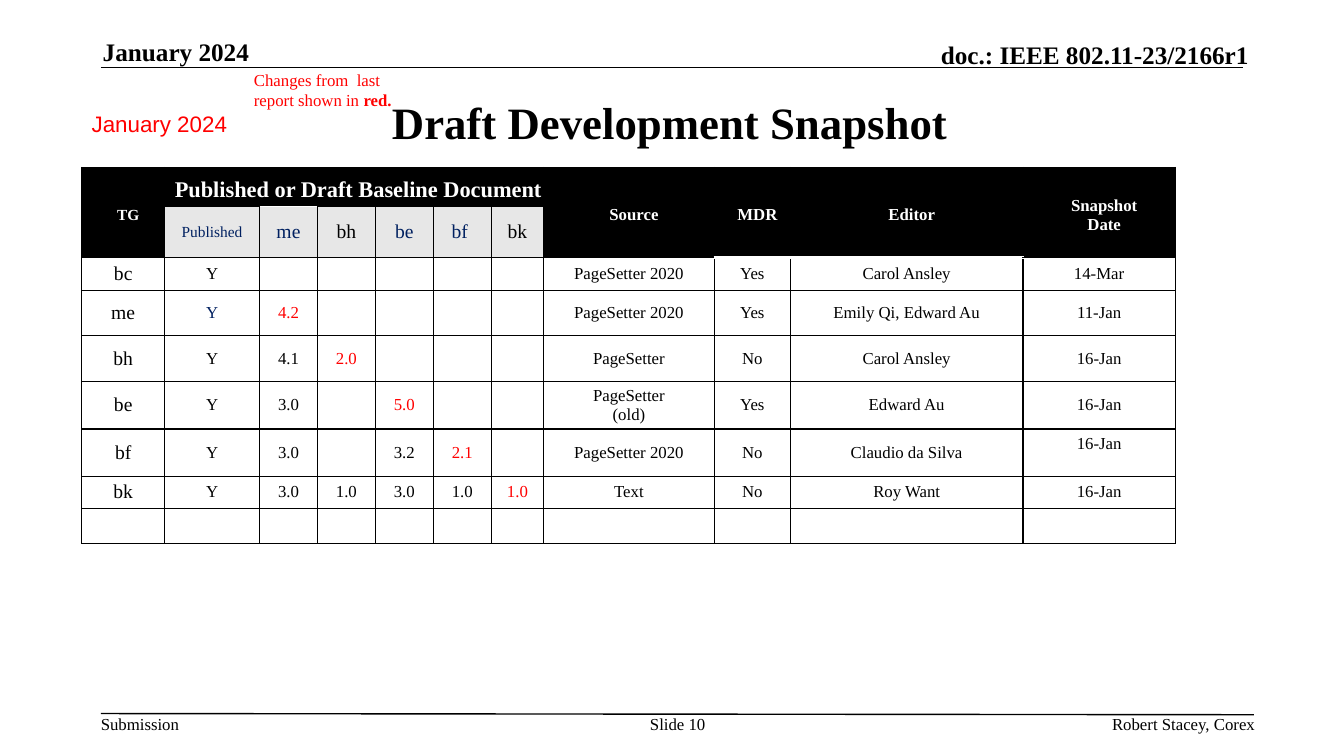
"""Build the draft development snapshot slide."""
from dataclasses import dataclass

from lxml import etree
from pptx import Presentation
from pptx import util as u
from pptx.dml.color import RGBColor
from pptx.enum import shapes, text
from pptx.oxml import ns

HUES = {"black": "000000", "white": "FFFFFF", "red": "FF0000", "navy": "002060", "grey": "E7E7E7"}
LEFT, MID, RIGHT = text.PP_ALIGN.LEFT, text.PP_ALIGN.CENTER, text.PP_ALIGN.RIGHT
TOP, CENTRE, BASE = text.MSO_ANCHOR.TOP, text.MSO_ANCHOR.MIDDLE, text.MSO_ANCHOR.BOTTOM
SERIF = "Times New Roman"


@dataclass(frozen=True)
class Style:
    size: int = 12
    hue: str = "black"
    bold: bool = False
    face: str = SERIF
    align: int = MID


@dataclass(frozen=True)
class Label:
    words: str
    left: float
    top: float
    width: float
    height: float
    style: Style
    anchor: int = TOP
    inset: bool = False
    strong: str = ""


@dataclass(frozen=True)
class Line:
    start: tuple[float, float]
    end: tuple[float, float]


LABELS = [
    Label("Submission", 2.54, 17.98, 2.01, 0.51, Style(align=LEFT)),
    Label("doc.: IEEE 802.11-23/2166r1", 18.52, 0.99, 12.95, 0.76, Style(18, bold=True, align=RIGHT), BASE),
    Label("Draft Development Snapshot", 2.49, 1.6, 28.78, 2.95, Style(32, bold=True), CENTRE, True),
    Label("Slide 10", 16.1, 17.98, 1.96, 1.02, Style()),
    Label("Robert Stacey, Corex", 19.84, 17.98, 11.79, 0.51, Style(align=RIGHT)),
    Label("January 2024", 2.59, 0.91, 6.93, 0.76, Style(18, bold=True, align=LEFT), BASE),
    Label("January 2024", 2.06, 2.64, 4.72, 0.94, Style(16, "red", face="Arial", align=LEFT), inset=True),
    Label("Changes from  last report shown in ", 6.15, 1.63, 4.65, 1.27,
          Style(hue="red", align=LEFT), inset=True, strong="red."),
]
LINES = [Line((2.54, 1.7), (31.32, 1.7)), Line((2.54, 17.98), (31.6, 18.01))]

WIDTHS = [2.09, 2.39, *[1.46] * 4, 1.32, 4.3, 1.92, 5.86, 3.84]
HEIGHTS = [0.99, 1.28, 0.83, 1.14, 1.16, 1.19, 1.19, 0.81, 0.89]
HEADS = {0: "TG", 1: "Published or Draft Baseline Document",
         7: "Source", 8: "MDR", 9: "Editor", 10: "Snapshot\nDate"}
DRAFTS = ["Published", "me", "bh", "be", "bf ", "bk"]
ROWS = [
    ["bc", "Y", "", "", "", "", "", "PageSetter 2020", "Yes", "Carol Ansley", "14-Mar"],
    ["me", "Y", "4.2", "", "", "", "", "PageSetter 2020", "Yes", "Emily Qi, Edward Au", "11-Jan"],
    ["bh", "Y", "4.1", "2.0", "", "", "", "PageSetter", "No", "Carol Ansley", "16-Jan"],
    ["be", "Y", "3.0", "", "5.0", "", "", "PageSetter\n(old)", "Yes", "Edward Au", "16-Jan"],
    ["bf", "Y", "3.0", "", "3.2", "2.1", "", "PageSetter 2020", "No", "Claudio da Silva", "16-Jan"],
    ["bk", "Y", "3.0", "1.0", "3.0", "1.0", "1.0", "Text", "No", "Roy Want", "16-Jan"],
    [""] * 11,
]


def ink(name: str) -> RGBColor:
    return RGBColor.from_string(HUES[name])


def write(frame, words: str, style: Style) -> None:
    for n, part in enumerate(words.split("\n")):
        para = frame.add_paragraph() if n else frame.paragraphs[0]
        if part:
            para.add_run().text = part
        para.alignment = style.align
        font = para.font
        font.name, font.size, font.bold = style.face, u.Pt(style.size), style.bold
        font.color.rgb = ink(style.hue)


def add_label(slide, label: Label) -> None:
    box = slide.shapes.add_textbox(*map(u.Cm, (label.left, label.top, label.width, label.height)))
    frame = box.text_frame
    frame.word_wrap = True
    frame.vertical_anchor = label.anchor
    side, edge = (0.25, 0.13) if label.inset else (0, 0)
    frame.margin_left = frame.margin_right = u.Cm(side)
    frame.margin_top = frame.margin_bottom = u.Cm(edge)
    write(frame, label.words, label.style)
    if label.strong:
        run = frame.paragraphs[0].add_run()
        run.text = label.strong
        run.font.bold = True


def add_line(slide, line: Line) -> None:
    wire = slide.shapes.add_connector(shapes.MSO_CONNECTOR.STRAIGHT, *map(u.Cm, line.start + line.end))
    wire.line.color.rgb = ink("black")
    wire.line.width = u.Pt(1)
    etree.SubElement(wire.element.spPr, ns.qn("a:effectLst"))


def add_edges(cell, row: int, col: int) -> None:
    props = cell._tc.get_or_add_tcPr()
    for side in "LRTB":
        hue, width = "black", 1
        if col in (8, 9) and row < 2 and side == "B":
            hue, width = "white", 3
        elif side == "T" and (row == 2 and col in (8, 9) or row == 1 and col == 2):
            hue = "white"
        edge = etree.SubElement(props, ns.qn(f"a:ln{side}"), w=str(u.Pt(width)))
        fill = etree.SubElement(edge, ns.qn("a:solidFill"))
        etree.SubElement(fill, ns.qn("a:srgbClr"), val=HUES[hue])


def pick(row: int, col: int) -> Style:
    if row == 0:
        return Style({0: 11, 1: 16}.get(col, 12), "white", True, align=LEFT if col == 1 else MID)
    if row == 1:
        return Style(11 if col == 1 else 14, "black" if col in (3, 6) else "navy")
    if col == 0:
        return Style(14)
    if row == 3 and col == 1:
        return Style(hue="navy")
    return Style(hue="red" if 2 <= col <= 6 and col == row - 1 else "black")


def add_grid(slide) -> None:
    frame = slide.shapes.add_table(len(HEIGHTS), len(WIDTHS), u.Cm(2.06), u.Cm(4.22),
                                   u.Cm(sum(WIDTHS)), u.Cm(sum(HEIGHTS)))
    grid = frame.table
    grid.first_row = grid.horz_banding = False
    for col, width in zip(grid.columns, WIDTHS):
        col.width = u.Cm(width)
    for row, height in zip(grid.rows, HEIGHTS):
        row.height = u.Cm(height)
    top = [HEADS.get(col, "") for col in range(len(WIDTHS))]
    second = ["", *DRAFTS, *[""] * 4]
    for row, line in enumerate([top, second, *ROWS]):
        for col, words in enumerate(line):
            cell = grid.cell(row, col)
            add_edges(cell, row, col)
            cell.vertical_anchor = CENTRE
            cell.margin_top = cell.margin_bottom = 0
            if row == 0:
                cell.margin_top, cell.margin_right = u.Cm(0.13), 0
            cell.fill.solid()
            shade = "white" if row > 1 else "grey" if row and 1 <= col <= 6 else "black"
            cell.fill.fore_color.rgb = ink(shade)
            write(cell.text_frame, words, pick(row, col))
    grid.cell(6, 10).margin_bottom = u.Cm(0.46)
    grid.cell(0, 1).merge(grid.cell(0, 6))
    for col in (0, 7, 8, 9, 10):
        grid.cell(0, col).merge(grid.cell(1, col))


def main() -> None:
    deck = Presentation()
    deck.slide_width, deck.slide_height = u.Cm(33.87), u.Cm(19.05)
    slide = deck.slides.add_slide(deck.slide_layouts[6])
    for line in LINES:
        add_line(slide, line)
    add_grid(slide)
    for label in LABELS:
        add_label(slide, label)
    deck.save("out.pptx")


if __name__ == "__main__":
    main()
